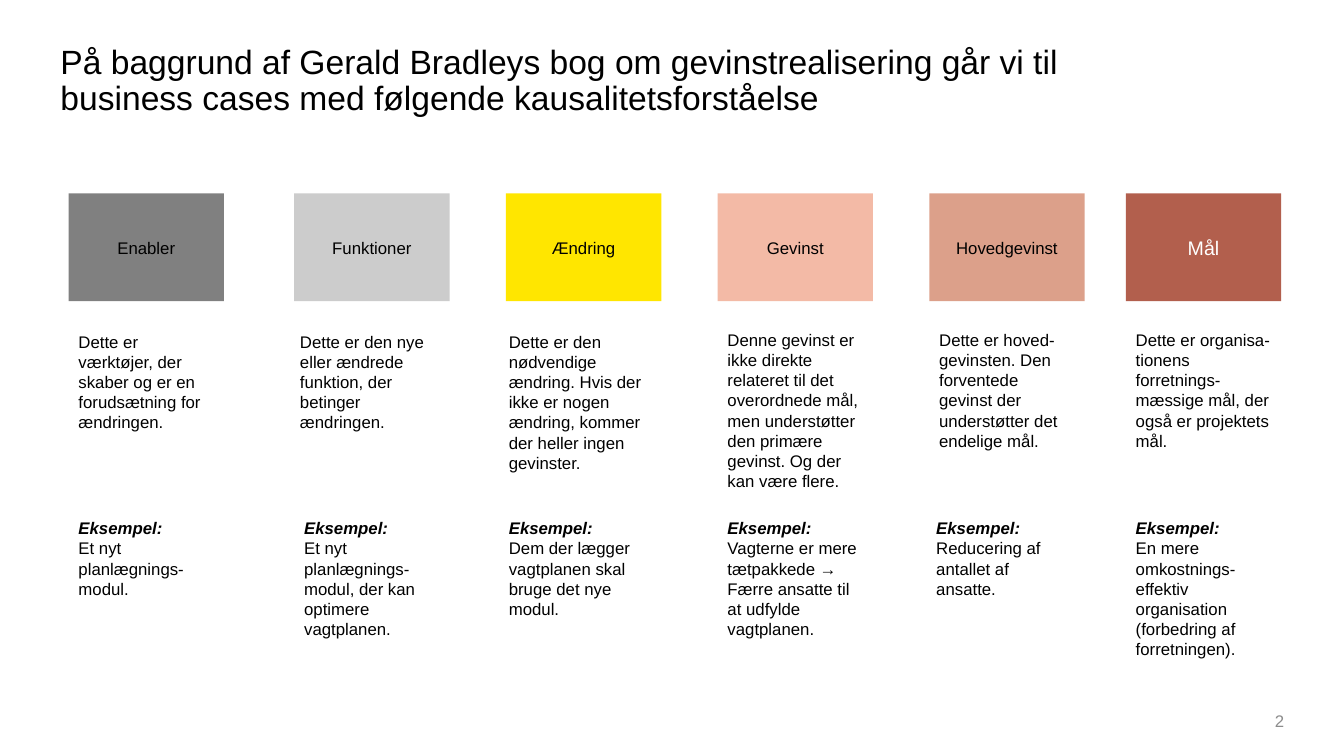
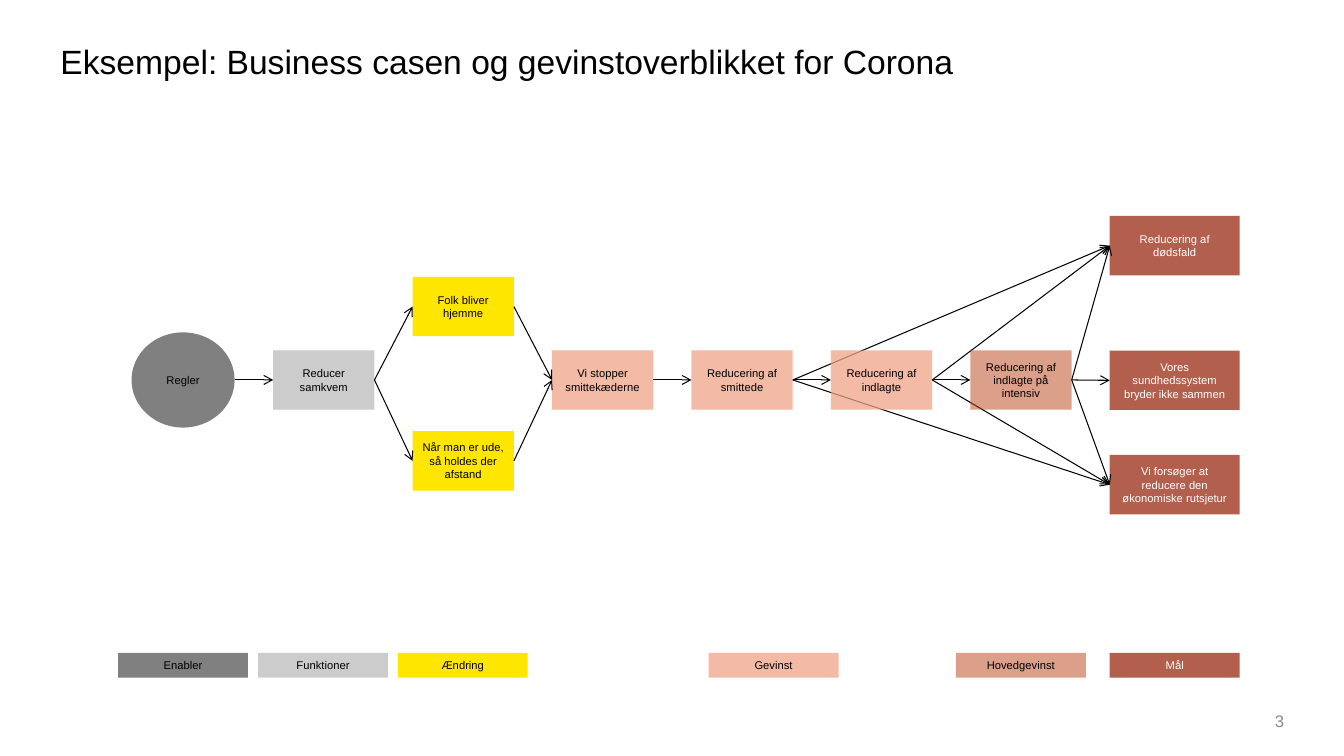
from lxml import etree
from pptx import Presentation
from pptx.dml.color import RGBColor
from pptx.enum import shapes, text
from pptx.oxml import ns
from pptx.util import Pt

HUES = {
    "ink": "000000", "white": "FFFFFF", "page": "8C8C8C",
    "Enabler": "808080", "Funktioner": "CCCCCC", "Ændring": "FFE600",
    "Gevinst": "F0A489", "Hovedgevinst": "BA4317", "Mål": "B25F4D",
}
ALPHA = {"Gevinst": 75, "Hovedgevinst": 50}
RECT = shapes.MSO_SHAPE.RECTANGLE
OVAL = shapes.MSO_SHAPE.OVAL
LEFT, MID, RIGHT = text.PP_ALIGN.LEFT, text.PP_ALIGN.CENTER, text.PP_ALIGN.RIGHT
TOP, HALF = text.MSO_ANCHOR.TOP, text.MSO_ANCHOR.MIDDLE


class Deck:
    """Hold the shared style and the current slide, and draw each kind of element."""

    font = "Arial"

    def __init__(self):
        self.prs = Presentation()
        self.prs.slide_width, self.prs.slide_height = Pt(960), Pt(540)

    def page(self, title, num):
        self.slide = self.prs.slides.add_slide(self.prs.slide_layouts[5])
        head = self.slide.shapes.title
        head.left, head.top, head.width, head.height = Pt(36), Pt(28.8), Pt(798.5), Pt(67)
        self.label(head, [[title]], 24)
        head.text_frame.paragraphs[0].line_spacing = 0.9
        foot = self.slide.shapes.add_textbox(Pt(816.5), Pt(500.5), Pt(108), Pt(28.8))
        self.label(foot, [[str(num)]], 12, "page", RIGHT, HALF)

    def label(self, shape, paras, size, hue="ink", align=LEFT, anchor=TOP):
        frame = shape.text_frame
        frame.word_wrap = True
        frame.auto_size = text.MSO_AUTO_SIZE.NONE
        frame.vertical_anchor = anchor
        for i, runs in enumerate(paras):
            para = frame.add_paragraph() if i else frame.paragraphs[0]
            para.alignment = align
            for words in runs:
                run = para.add_run()
                run.text = words
                run.font.name, run.font.size = self.font, Pt(size)
                run.font.color.rgb = RGBColor.from_string(HUES[hue])
                if words.strip() == "Eksempel:":
                    run.font.bold = run.font.italic = True

    def note(self, x, y, high, paras):
        box = self.slide.shapes.add_textbox(Pt(x), Pt(y), Pt(111), Pt(high))
        self.label(box, paras, 12)
        box.text_frame.auto_size = text.MSO_AUTO_SIZE.SHAPE_TO_FIT_TEXT

    def block(self, kind, words, x, y, wide, high, size, form=RECT):
        box = self.slide.shapes.add_shape(form, Pt(x), Pt(y), Pt(wide), Pt(high))
        box.shadow.inherit = False
        box.fill.solid()
        box.fill.fore_color.rgb = RGBColor.from_string(HUES[kind])
        if kind in ALPHA:
            tint = next(box.element.iter(ns.qn("a:srgbClr")))
            etree.SubElement(tint, ns.qn("a:alpha"), val=str(ALPHA[kind] * 1000))
        box.line.fill.background()
        frame = box.text_frame
        frame.margin_left = frame.margin_right = Pt(6)
        self.label(box, [[words]], size, "white" if kind == "Mål" else "ink", MID, HALF)
        return box

    def link(self, a, b):
        line = self.slide.shapes.add_connector(
            shapes.MSO_CONNECTOR.STRAIGHT,
            a.left + a.width, a.top + a.height // 2, b.left, b.top + b.height // 2)
        if a.auto_shape_type == RECT:
            line.begin_connect(a, 3)
        line.end_connect(b, 1)
        line.line.width = Pt(0.75)
        line.line.color.rgb = RGBColor.from_string(HUES["ink"])
        props = line.element.spPr
        etree.SubElement(props.find(ns.qn("a:ln")), ns.qn("a:tailEnd"), type="arrow")
        etree.SubElement(props, ns.qn("a:effectLst"))

    def front(self, box):
        self.slide.shapes.element.append(box.element)


STEPS = [
    ("Enabler", 49, 49, 49, 233.3,
     "Dette er værktøjer, der skaber og er en forudsætning for ændringen.",
     [["Eksempel:"], ["Et nyt planlægnings-modul."]]),
    ("Funktioner", 210.2, 207.2, 210.2, 233.3,
     "Dette er den nye eller ændrede funktion, der betinger ændringen.",
     [["Eksempel:"], ["Et nyt planlægnings-modul, der kan optimere vagtplanen."]]),
    ("Ændring", 361.4, 356.4, 356.4, 233.3,
     "Dette er den nødvendige ændring. Hvis der ikke er nogen ændring, "
     "kommer der heller ingen gevinster.",
     [["Eksempel:"], ["Dem der lægger vagtplanen skal bruge det nye modul."]]),
    ("Gevinst", 512.6, 512.6, 512.6, 232,
     "Denne gevinst er ikke direkte relateret til det overordnede mål, "
     "men understøtter den primære gevinst. Og der kan være flere.",
     [["Eksempel:"],
      ["Vagterne er mere tætpakkede → Færre ansatte til at udfylde vagtplanen."]]),
    ("Hovedgevinst", 663.8, 663.8, 661.7, 232,
     "Dette er hoved-gevinsten. Den forventede gevinst der understøtter det endelige mål.",
     [["Eksempel: ", "Reducering af antallet af ansatte."]]),
    ("Mål", 804.2, 804.2, 804.2, 232,
     "Dette er organisa-tionens forretnings-mæssige mål, der også er projektets mål.",
     [["Eksempel:"], ["En mere omkostnings-effektiv organisation"],
      ["(forbedring af forretningen)."]]),
]

NODES = {
    "cut": ("Funktioner", "Reducer samkvem", 0, 271.4),
    "home": ("Ændring", "Folk bliver hjemme", 1, 219),
    "out": ("Ændring", "Når man er ude, så holdes der afstand", 1, 329.2),
    "stop": ("Gevinst", "Vi stopper smittekæderne", 2, 271.4),
    "sick": ("Gevinst", "Reducering af smittede", 3, 271.4),
    "ward": ("Gevinst", "Reducering af indlagte", 4, 271.4),
    "care": ("Hovedgevinst", "Reducering af indlagte på intensiv", 5, 271.4),
    "dead": ("Mål", "Reducering af dødsfald", 6, 175.5),
    "health": ("Mål", "Vores sundhedssystem bryder ikke sammen", 6, 271.7),
    "money": ("Mål", "Vi forsøger at reducere den økonomiske rutsjetur", 6, 346.2),
}

LINKS = {
    "rules": ["cut"], "cut": ["home", "out"], "home": ["stop"], "out": ["stop"],
    "stop": ["sick"], "sick": ["ward", "dead", "money"],
    "ward": ["care", "dead", "money"], "care": ["dead", "health", "money"],
}

KEYS = {"Enabler": 84.4, "Funktioner": 184.4, "Ændring": 284.2,
        "Gevinst": 506.2, "Hovedgevinst": 682.8, "Mål": 792.7}


def model(deck):
    deck.page("På baggrund af Gerald Bradleys bog om gevinstrealisering går vi til "
              "business cases med følgende kausalitetsforståelse", 2)
    for kind, x, left, low, y, about, case in STEPS:
        deck.block(kind, kind, x, 138.2, 111, 77, 14 if kind == "Mål" else 12)
        deck.note(left, y, 94, [[about]])
        deck.note(low, 366.5, 80, case)


def chain(deck):
    deck.page("Eksempel: Business casen og gevinstoverblikket for Corona", 3)
    boxes = {"rules": deck.block("Enabler", "Regler", 94, 237.4, 73.6, 68, 8, OVAL)}
    for name, (kind, words, col, y) in NODES.items():
        wide = 92.8 if kind == "Mål" else 72.4
        boxes[name] = deck.block(kind, words, 195.1 + 99.6 * col, y - 21.2, wide, 42.4, 8)
    for start, ends in LINKS.items():
        for end in ends:
            deck.link(boxes[start], boxes[end])
    for name in ("care", "ward"):
        deck.front(boxes[name])
    for kind, x in KEYS.items():
        deck.block(kind, kind, x, 466.4, 92.8, 17.6, 8)


def main():
    deck = Deck()
    model(deck)
    chain(deck)
    deck.prs.save("out.pptx")


if __name__ == "__main__":
    main()
